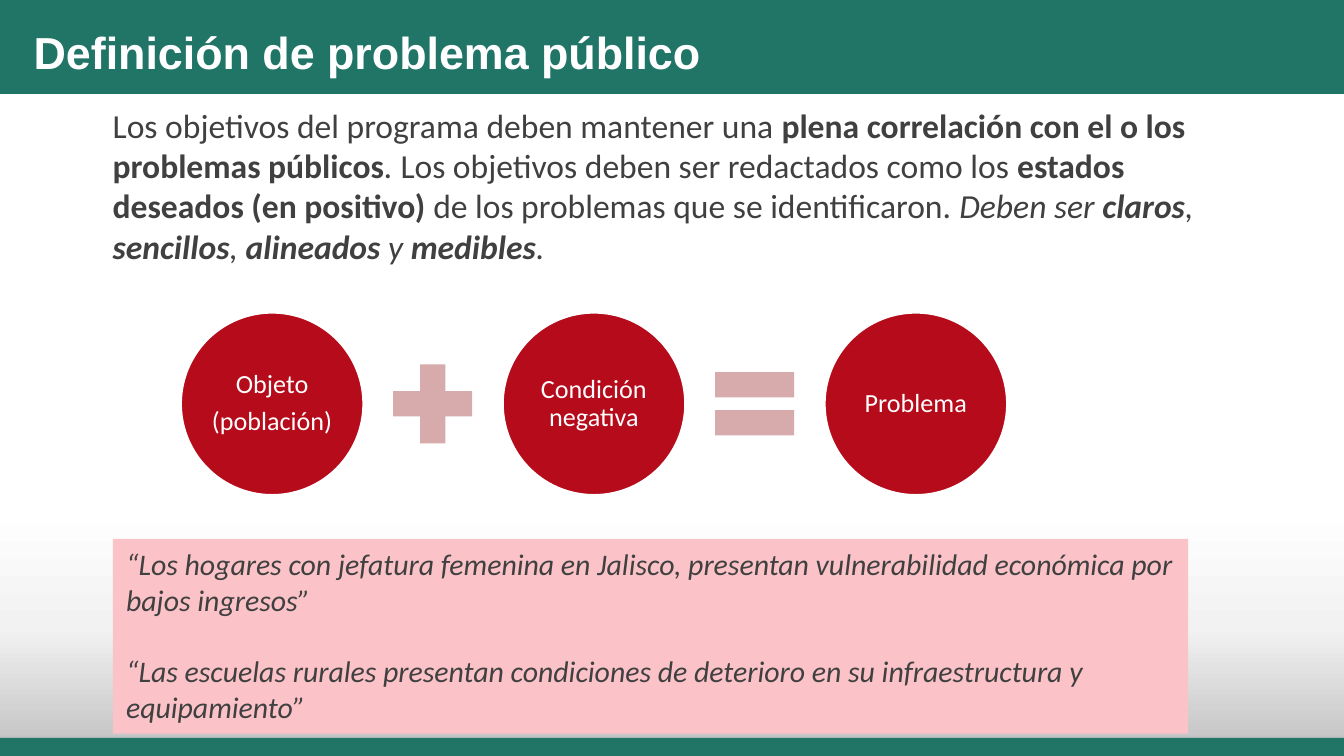
from copy import deepcopy

from lxml import etree
from pptx import Presentation
from pptx.dml.color import RGBColor
from pptx.enum.shapes import MSO_SHAPE
from pptx.enum.text import MSO_ANCHOR, PP_ALIGN
from pptx.oxml.ns import qn
from pptx.util import Inches, Pt

RECT, OVAL = MSO_SHAPE.RECTANGLE, MSO_SHAPE.OVAL
PLUS, EQUAL = MSO_SHAPE.MATH_PLUS, MSO_SHAPE.MATH_EQUAL
LEFT, CENTER = PP_ALIGN.LEFT, PP_ALIGN.CENTER
TOP, MIDDLE = MSO_ANCHOR.TOP, MSO_ANCHOR.MIDDLE

# Content: runs are (text, style), where b is bold and i is italic
TITLE = "Definición de problema público"
INTRO = [
    ("Los objetivos del programa deben mantener una ", ""),
    ("plena correlación con el o los problemas públicos", "b"),
    (". ", "i"),
    ("Los objetivos deben ser redactados como los ", ""),
    ("estados deseados (en positivo) ", "b"),
    ("de los problemas que se identificaron. ", ""),
    ("Deben ser ", "i"), ("claros", "bi"), (", ", "i"),
    ("sencillos", "bi"), (", ", "i"), ("alineados", "bi"),
    (" y ", "i"), ("medibles", "bi"), (".", "i"),
]
TERMS = [["Objeto", "(población)"], ["Condición negativa"], ["Problema"]]
SIGNS = [PLUS, EQUAL]
QUOTES = [
    "“Los hogares con jefatura femenina en Jalisco, presentan vulnerabilidad "
    "económica por bajos ingresos”",
    "“Las escuelas rurales presentan condiciones de deterioro en su "
    "infraestructura y equipamiento”",
]

# Theme
THEME = {
    "green": "217567", "red": "B50B1B", "rose": "D7ABAC", "pink": "FBC3C8",
    "white": "FFFFFF", "ink": "404040",
    "fade": [(0.5, "FFFFFF"), (0.74, "F2F2F2"), (1, "BFBFBF")],
    "head": {"name": "Arial", "size": Pt(24), "bold": True},
    "text": {"name": "Calibri", "size": Pt(18)},
    "term": {"name": "Calibri", "size": Pt(14)},
    "quote": {"name": "Calibri", "size": Pt(16)},
}

# Slide size, 16:9
WIDE = 10
HIGH = WIDE * 9 / 16


def color(key):
    return RGBColor.from_string(THEME.get(key, key))


def add_shape(kind, box, fill=None):
    shape = slide.shapes.add_shape(kind, *map(Inches, box))
    shape.shadow.inherit = False
    shape.line.fill.background()
    if fill:
        shape.fill.solid()
        shape.fill.fore_color.rgb = color(fill)
    return shape


def write(shape, paras, font, ink, align=LEFT, anchor=TOP, inset=None, **form):
    frame = shape.text_frame
    frame.word_wrap = True
    frame.vertical_anchor = anchor
    if inset is not None:
        for side in ("left", "top", "right", "bottom"):
            setattr(frame, f"margin_{side}", Inches(inset))
    for n, runs in enumerate(paras):
        para = frame.add_paragraph() if n else frame.paragraphs[0]
        para.alignment = align
        for key, value in form.items():
            if n or key != "space_before":
                setattr(para, key, value)
        for text, style in runs:
            run = para.add_run()
            run.text = text
            look = {"bold": "b" in style, "italic": "i" in style, **THEME[font]}
            for key, value in look.items():
                setattr(run.font, key, value)
            run.font.color.rgb = color(ink)


deck = Presentation()
deck.slide_width, deck.slide_height = Inches(WIDE), Inches(HIGH)
slide = deck.slides.add_slide(deck.slide_layouts[5])

# Background fade
fade = add_shape(RECT, (0, 1.94, WIDE, HIGH - 1.94))
fade.fill.gradient()
fade.fill.gradient_angle = 270
stops = next(fade._element.iter(qn("a:gsLst")))
stops.append(deepcopy(stops[-1]))
for stop, (place, tone) in zip(fade.fill.gradient_stops, THEME["fade"]):
    stop.position = place
    stop.color.rgb = color(tone)

# Green bands, the lower one with a soft shadow
add_shape(RECT, (0, 0, WIDE, 0.7), "green")
foot = add_shape(RECT, (-0.04, 5.49, WIDE + 0.08, 0.14), "green")
glow = etree.SubElement(
    foot._element.spPr.find(qn("a:effectLst")), qn("a:outerShdw"),
    blurRad=str(Pt(3.1)), dist=str(Pt(1.8)), dir="5400000", rotWithShape="0")
tint = etree.SubElement(glow, qn("a:srgbClr"), val="000000")
etree.SubElement(tint, qn("a:alpha"), val="35000")

# Title, brought in front of the bands
title = slide.shapes.title
slide.shapes._spTree.append(title._element)
title.left, title.top, title.width, title.height = map(
    Inches, (0.15, 0.04, 9.68, 0.69))
write(title, [[(TITLE, "")]], "head", "white", anchor=MIDDLE)

# Introduction
intro = slide.shapes.add_textbox(*map(Inches, (0.74, 0.73, 8.58, 1.31)))
write(intro, [INTRO], "text", "ink")

# Equation: circles with a sign in each gap
START, DISC, SIGN, GAP = 1.34, 1.37, 0.8, 0.11
MID = 2.32 + DISC / 2
STEP = (6.13 - START) / 2
for n, lines in enumerate(TERMS):
    left = START + n * STEP
    disc = add_shape(OVAL, (left, MID - DISC / 2, DISC, DISC), "red")
    disc.line.color.rgb = color("white")
    disc.line.width = Pt(2)
    write(disc, [[(line, "")] for line in lines], "term", "white", CENTER,
          MIDDLE, 0.02, line_spacing=0.9, space_after=Pt(4.9))
    if n < len(SIGNS):
        add_shape(SIGNS[n], (left + DISC + GAP, MID - SIGN / 2, SIGN, SIGN),
                  "rose")

# Examples
panel = add_shape(RECT, (0.84, 4.01, 8, 1.45), "pink")
write(panel, [[(quote, "i")] for quote in QUOTES], "quote", "ink",
      space_before=Pt(19))

deck.save("out.pptx")
